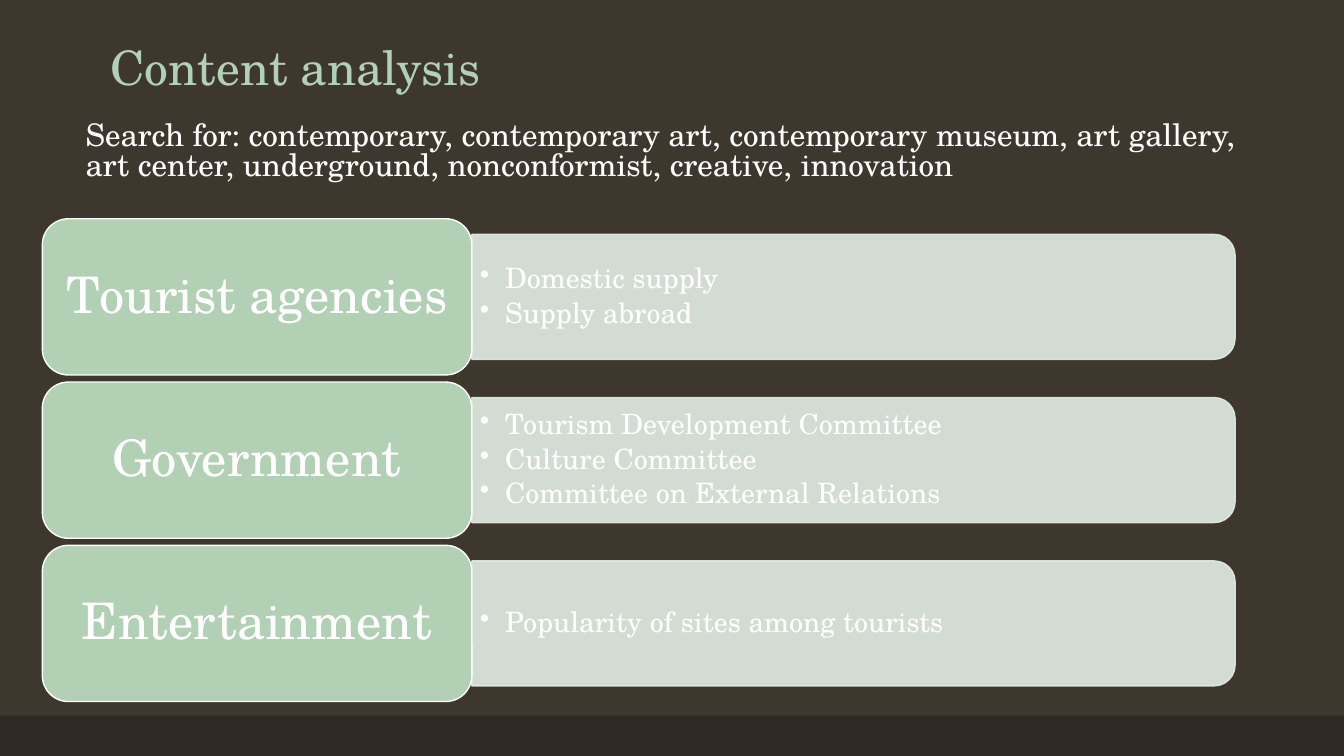
"""Build the content analysis slide with three labelled rows of findings."""
from lxml.etree import SubElement
from pptx import Presentation
from pptx.dml.color import RGBColor
from pptx.enum.shapes import MSO_SHAPE
from pptx.enum.text import MSO_ANCHOR, PP_ALIGN
from pptx.oxml.ns import qn
from pptx.util import Inches, Pt

TITLE = "Content analysis"
SEARCH = (
    "Search for: contemporary, contemporary art, contemporary museum, art gallery, "
    "art center, underground, nonconformist, creative, innovation"
)
ROWS = [
    ("Tourist agencies", ["Domestic supply", "Supply abroad"]),
    ("Government", ["Tourism Development Committee", "Culture Committee",
                    "Committee on External Relations"]),
    ("Entertainment", ["Popularity of sites among tourists"]),
]
THEME = {
    "font": "TeX Gyre Schola",
    "background": "3D372E", "footer": "2E2923", "accent": "B2D0B4",
    "panel": "E4EEE5", "text": "FFFFFF",
    "title_size": 34, "search_size": 22.2, "label_size": 36, "bullet_size": 20,
}
SLIDE_WIDTH, SLIDE_HEIGHT = 13.33, 7.5
FOOTER_HEIGHT = 0.4
ROW_LEFT, ROW_TOP, ROW_PITCH = 0.42, 2.17, 1.62
LABEL_WIDTH, LABEL_HEIGHT = 4.26, 1.55
PANEL_WIDTH, PANEL_HEIGHT = 7.57, 1.24
BULLET_WIDTH, BULLET_HEIGHT = 7.51, 1.12
PANEL_OPACITY = 90


def color(name):
    return RGBColor.from_string(THEME[name])


def add_box(slide, left, top, width, height):
    return slide.shapes.add_textbox(Inches(left), Inches(top), Inches(width), Inches(height))


def add_block(slide, kind, left, top, width, height, fill, line=None):
    shape = slide.shapes.add_shape(
        kind, Inches(left), Inches(top), Inches(width), Inches(height))
    shape.shadow.inherit = False
    shape.fill.solid()
    shape.fill.fore_color.rgb = color(fill)
    if line:
        shape.line.color.rgb = color(line)
        shape.line.width = Pt(1)
    else:
        shape.line.fill.background()
    return shape


def set_opacity(shape, percent):
    for solid_color in shape._element.spPr.iter(qn("a:srgbClr")):
        SubElement(solid_color, qn("a:alpha"), val=str(percent * 1000))


def add_bullet(paragraph):
    properties = paragraph._p.get_or_add_pPr()
    properties.set("marL", str(Inches(0.25)))
    properties.set("indent", str(Inches(-0.25)))
    SubElement(properties, qn("a:buChar"), char="•")


def write_text(shape, *lines, size, fill="text", anchor=MSO_ANCHOR.MIDDLE,
               align=PP_ALIGN.LEFT, spacing=0.9, after=0, margins=(0.1, 0.05), bullets=False):
    frame = shape.text_frame
    frame.word_wrap = True
    frame.vertical_anchor = anchor
    frame.margin_left = frame.margin_right = Inches(margins[0])
    frame.margin_top = frame.margin_bottom = Inches(margins[1])
    for index, line in enumerate(lines):
        paragraph = frame.add_paragraph() if index else frame.paragraphs[0]
        paragraph.alignment = align
        paragraph.line_spacing = spacing
        paragraph.space_after = Pt(after)
        if bullets:
            add_bullet(paragraph)
        run = paragraph.add_run()
        run.text = line
        run.font.name = THEME["font"]
        run.font.size = Pt(THEME[size])
        run.font.color.rgb = color(fill)


def add_row(slide, top, label, findings):
    middle = top + LABEL_HEIGHT / 2
    panel_left = ROW_LEFT + LABEL_WIDTH
    panel = add_block(
        slide, MSO_SHAPE.ROUND_2_SAME_RECTANGLE,
        panel_left + (PANEL_WIDTH - PANEL_HEIGHT) / 2, middle - PANEL_WIDTH / 2,
        PANEL_HEIGHT, PANEL_WIDTH, "panel", "panel")
    panel.rotation = 90
    set_opacity(panel, PANEL_OPACITY)
    bullet_box = add_box(
        slide, panel_left, middle - BULLET_HEIGHT / 2, BULLET_WIDTH, BULLET_HEIGHT)
    write_text(bullet_box, *findings, size="bullet_size", after=3,
               margins=(0.08, 0.04), bullets=True)
    label_block = add_block(slide, MSO_SHAPE.ROUNDED_RECTANGLE, ROW_LEFT, top,
                            LABEL_WIDTH, LABEL_HEIGHT, "accent", "text")
    write_text(label_block, label, size="label_size", align=PP_ALIGN.CENTER,
               margins=(0.15, 0.07))


def main():
    presentation = Presentation()
    presentation.slide_width = Inches(SLIDE_WIDTH)
    presentation.slide_height = Inches(SLIDE_HEIGHT)
    slide = presentation.slides.add_slide(presentation.slide_layouts[6])
    slide.background.fill.solid()
    slide.background.fill.fore_color.rgb = color("background")
    add_block(slide, MSO_SHAPE.RECTANGLE, 0, SLIDE_HEIGHT - FOOTER_HEIGHT,
              SLIDE_WIDTH, FOOTER_HEIGHT, "footer")
    write_text(add_box(slide, 1, -0.25, 11.5, 1.25), TITLE, size="title_size",
               fill="accent", anchor=MSO_ANCHOR.BOTTOM)
    write_text(add_box(slide, 0.75, 1.17, 11.75, 1.25), SEARCH, size="search_size",
               anchor=MSO_ANCHOR.TOP, spacing=0.8)
    for index, (label, findings) in enumerate(ROWS):
        add_row(slide, ROW_TOP + index * ROW_PITCH, label, findings)
    presentation.save("out.pptx")


if __name__ == "__main__":
    main()
